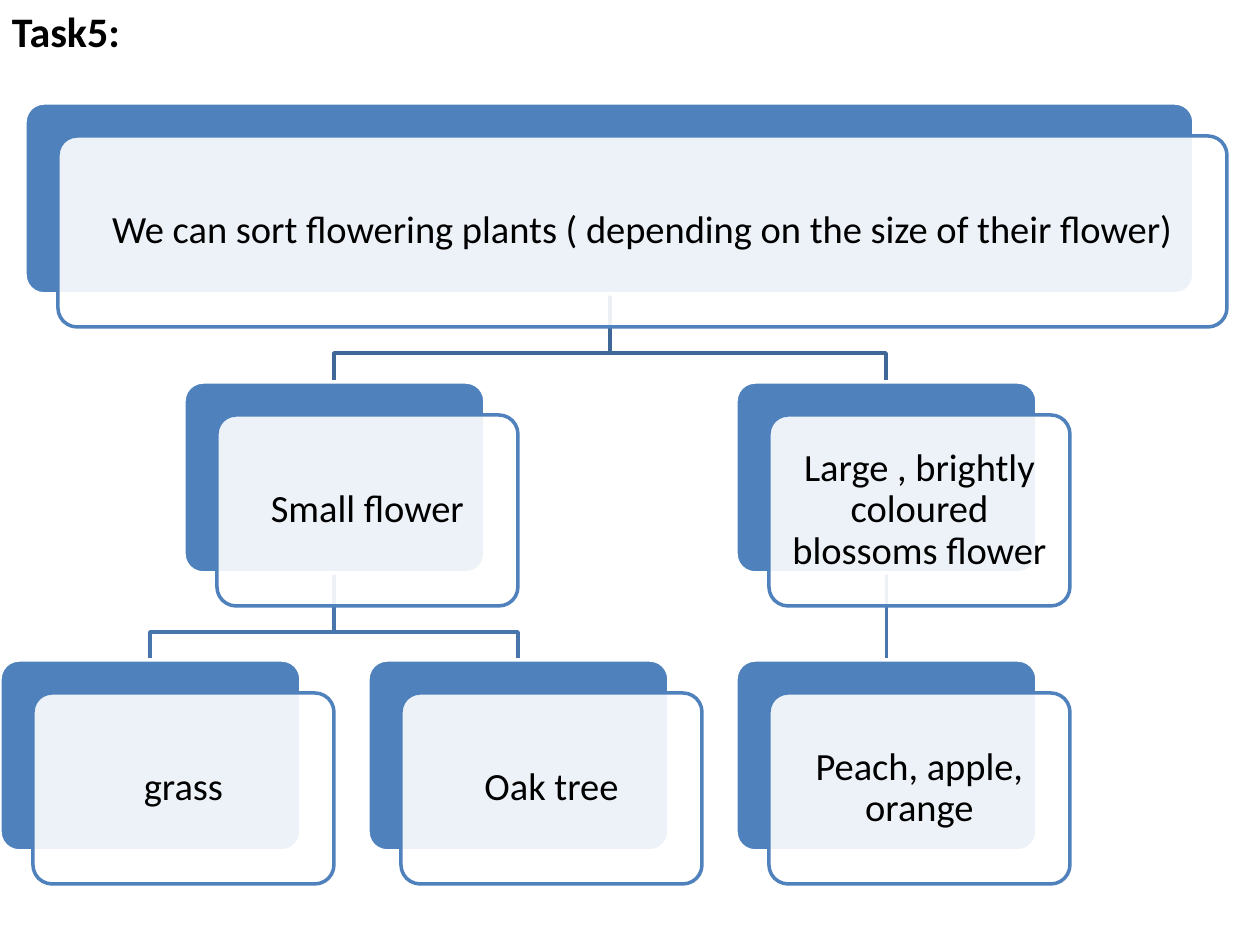
from lxml.etree import SubElement
from pptx import Presentation
from pptx.dml.color import RGBColor
from pptx.enum.shapes import MSO_CONNECTOR, MSO_SHAPE
from pptx.enum.text import MSO_ANCHOR, PP_ALIGN
from pptx.oxml.ns import qn
from pptx.util import Pt

PX = 914400 / 126
BLUE = RGBColor(0x4F, 0x81, 0xBD)
WHITE = RGBColor(0xFF, 0xFF, 0xFF)
BLACK = RGBColor(0x00, 0x00, 0x00)
LINK_TOP = RGBColor(0x3F, 0x67, 0x97)
LINK_LOW = RGBColor(0x48, 0x75, 0xAC)

CARD_W, CARD_H = 301, 191
OFFSET = 33      # shift of the front plate from the back plate
COLUMN = 368     # step between cards
ELBOW = 59       # drop before a branch turns
ROWS = 0, 279, 557


def px(n):
    return round(n * PX)


def write(sp, text, size=22, bold=False, align=PP_ALIGN.CENTER,
          anchor=MSO_ANCHOR.MIDDLE, inset=11, spacing=0.9):
    tf = sp.text_frame
    tf.word_wrap = True
    tf.vertical_anchor = anchor
    tf.margin_left = tf.margin_right = px(inset)
    tf.margin_top = tf.margin_bottom = px(inset)
    p = tf.paragraphs[0]
    p.alignment = align
    p.line_spacing = spacing
    r = p.add_run()
    r.text = text
    r.font.name = "Calibri"
    r.font.size = Pt(size)
    r.font.bold = bold
    r.font.color.rgb = BLACK


def plate(s, x, y, w, fill, line, alpha=100):
    sp = s.shapes.add_shape(MSO_SHAPE.ROUNDED_RECTANGLE,
                            px(x), px(y), px(w), px(CARD_H))
    sp.adjustments[0] = 0.1
    sp.shadow.inherit = False
    sp.fill.solid()
    sp.fill.fore_color.rgb = fill
    sp.line.color.rgb = line
    sp.line.width = Pt(2)
    if alpha < 100:
        color = sp.fill._xPr.find(qn("a:solidFill"))[0]
        SubElement(color, qn("a:alpha"), val=str(alpha * 1000))
    return sp


def card(s, x, y, w, text):
    back = plate(s, x, y, w, BLUE, WHITE)
    front = plate(s, x + OFFSET, y + OFFSET, w, WHITE, BLUE, alpha=90)
    write(front, text)
    return back


def branch(s, x1, y1, x2, y2, color):
    turn = y1 + ELBOW
    fb = s.shapes.build_freeform(px(x1), px(y1))
    fb.add_line_segments([(px(x), px(y)) for x, y in
                          ((x1, turn), (x2, turn), (x2, y2))], close=False)
    sp = fb.convert_to_shape()
    sp.shadow.inherit = False
    sp.fill.background()
    sp.line.color.rgb = color
    sp.line.width = Pt(2)


def straight_link(s, upper, lower, color, behind):
    c = s.shapes.add_connector(MSO_CONNECTOR.STRAIGHT, 0, 0, 0, 0)
    c.begin_connect(upper, 2)
    c.end_connect(lower, 0)
    c.line.color.rgb = color
    c.line.width = Pt(2)
    SubElement(c._element.spPr, qn("a:effectLst"))
    behind._element.addprevious(c._element)


def heading(s, x, y, w, h):
    sp = s.shapes.add_textbox(px(x), px(y), px(w), px(h))
    write(sp, "Task5:", size=24, bold=True, align=PP_ALIGN.LEFT,
          anchor=MSO_ANCHOR.TOP, inset=12, spacing=1.0)
    sp.text_frame.margin_top = px(6)


def tree(s, x, y):
    top, mid, low = (y + row for row in ROWS)
    small_x, large_x = x + COLUMN // 2, x + 2 * COLUMN
    half = CARD_W // 2
    root_x = (small_x + large_x) // 2 + half

    # Branches lie behind the cards
    for child_x in (large_x, small_x):
        branch(s, root_x, top + CARD_H, child_x + half, mid, LINK_TOP)
    for child_x in (x + COLUMN, x):
        branch(s, small_x + half, mid + CARD_H, child_x + half, low, LINK_LOW)

    # Cards, from the root down
    root = card(s, x + 25, top, 1169,
                "We can sort flowering plants ( depending on the size of their flower)")
    card(s, small_x, mid, CARD_W, "Small flower")
    card(s, x, low, CARD_W, "grass")
    card(s, x + COLUMN, low, CARD_W, "Oak tree")
    large = card(s, large_x, mid, CARD_W,
                 "Large , brightly coloured blossoms flower")
    fruit = card(s, large_x, low, CARD_W, "Peach, apple, orange")
    straight_link(s, large, fruit, LINK_LOW, behind=root)


def main():
    prs = Presentation()
    prs.slide_width, prs.slide_height = px(1260), px(945)
    s = prs.slides.add_slide(prs.slide_layouts[6])
    heading(s, 0, 0, 1260, 945)
    tree(s, 0, 103)
    prs.save("out.pptx")


if __name__ == "__main__":
    main()
